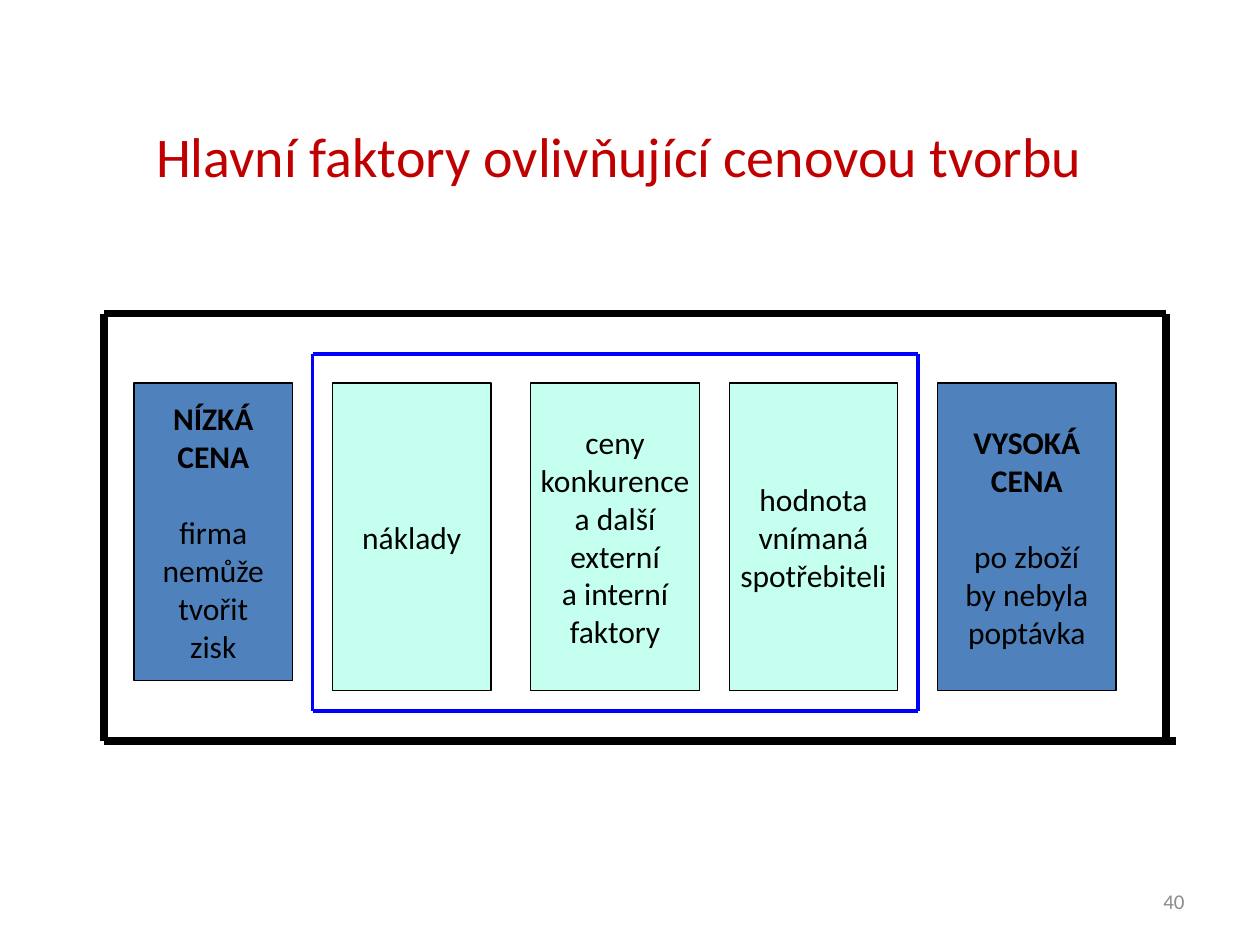
import pptx
import pptx.dml.color
import pptx.enum.shapes
import pptx.enum.text
import pptx.oxml.ns
import pptx.util
import lxml.etree

Cm = pptx.util.Cm
Pt = pptx.util.Pt
ALIGN = pptx.enum.text.PP_ALIGN
MIDDLE = pptx.enum.text.MSO_ANCHOR.MIDDLE

BLACK, BLUE, RED, GREY = "000000", "0000FF", "C00000", "8C8C8C"
STEEL, MINT = "4F81BD", "C5FFF0"
BOX_TOP = 7.72

# left, width, height, fill, bold heading lines, plain lines
FACTORS = [
    (2.7, 3.2, 6.0, STEEL, ["NÍZKÁ", "CENA"], ["firma", "nemůže", "tvořit", "zisk"]),
    (6.7, 3.2, 6.2, MINT, [], ["náklady"]),
    (10.7, 3.4, 6.2, MINT, [],
     ["ceny", "konkurence", "a další", "externí", "a interní", "faktory"]),
    (14.7, 3.4, 6.2, MINT, [], ["hodnota", "vnímaná", "spotřebiteli"]),
    (18.9, 3.6, 6.2, STEEL, ["VYSOKÁ", "CENA"], ["po zboží", "by nebyla", "poptávka"]),
]


def rgb(value):
    return pptx.dml.color.RGBColor.from_string(value)


def write_line(para, text, align, color, **font_values):
    para.alignment = align
    span = para.add_run()
    span.text = text
    span.font.color.rgb = rgb(color)
    for name, value in {"name": "Calibri", "bold": False, **font_values}.items():
        setattr(span.font, name, value)


def place(shape, left, top, width, height):
    position = {"left": left, "top": top, "width": width, "height": height}
    for name, value in position.items():
        setattr(shape, name, Cm(value))


def add_title(page, text):
    title = page.shapes.title
    place(title, 1.27, 2.2, 22.43, 1.86)
    title.text_frame.vertical_anchor = MIDDLE
    write_line(title.text_frame.paragraphs[0], text, ALIGN.CENTER, RED, size=Pt(32))


def add_page_number(page, text):
    box = page.shapes.add_textbox(Cm(18.2), Cm(17.65), Cm(5.93), Cm(1.02))
    box.text_frame.word_wrap = True
    box.text_frame.vertical_anchor = MIDDLE
    write_line(box.text_frame.paragraphs[0], text, ALIGN.RIGHT, GREY, size=Pt(12))


def add_factor(page, left, width, height, fill, heading, lines):
    box = page.shapes.add_shape(pptx.enum.shapes.MSO_SHAPE.RECTANGLE,
                                Cm(left), Cm(BOX_TOP), Cm(width), Cm(height))
    box.shadow.inherit = False
    box.fill.solid()
    box.fill.fore_color.rgb = rgb(fill)
    box.line.color.rgb = rgb(BLACK)
    box.line.width = Pt(0.75)
    frame = box.text_frame
    frame.word_wrap = False
    frame.vertical_anchor = MIDDLE
    for index, text in enumerate(heading + lines):
        para = frame.add_paragraph() if index else frame.paragraphs[0]
        if heading and index == len(heading):
            para.space_before = Pt(22)
        write_line(para, text, ALIGN.CENTER, BLACK,
                   size=Pt(18), bold=index < len(heading))


def add_line(page, start, end, color, weight):
    line = page.shapes.add_connector(pptx.enum.shapes.MSO_CONNECTOR.STRAIGHT,
                                     *map(Cm, start + end))
    line.line.color.rgb = rgb(color)
    line.line.width = Pt(weight)
    lxml.etree.SubElement(line._element.spPr, pptx.oxml.ns.qn("a:effectLst"))


def add_frame(page, left, top, right, bottom, color, weight, overhang=0):
    """Draw four lines; the bottom one runs past the right side by overhang."""
    sides = [
        ((left, top), (right, top)),
        ((left, bottom), (right + overhang, bottom)),
        ((left, top), (left, bottom)),
        ((right, top), (right, bottom)),
    ]
    for start, end in sides:
        add_line(page, start, end, color, weight)


def main():
    deck = pptx.Presentation()
    deck.slide_width, deck.slide_height = Cm(25.4), Cm(19.05)
    page = deck.slides.add_slide(deck.slide_layouts.get_by_name("Title Only"))
    add_page_number(page, "40")
    add_title(page, "Hlavní faktory ovlivňující cenovou tvorbu")
    for factor in FACTORS:
        add_factor(page, *factor)
    add_frame(page, 2.1, 6.32, 23.5, 14.93, BLACK, 4.5, overhang=0.2)
    add_frame(page, 6.3, 7.13, 18.5, 14.33, BLUE, 2.25)
    deck.save("out.pptx")


if __name__ == "__main__":
    main()
